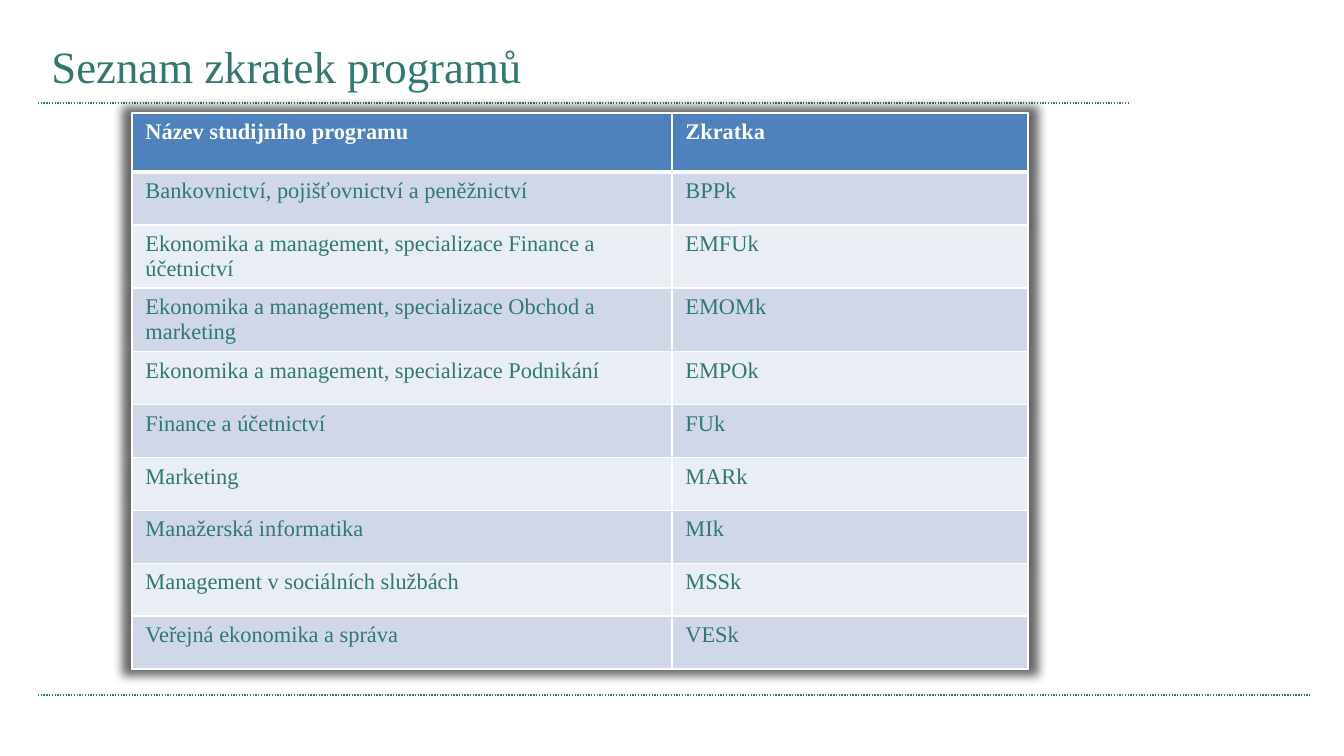
from lxml.etree import SubElement
from pptx import Presentation
from pptx.dml.color import RGBColor
from pptx.enum.dml import MSO_LINE_DASH_STYLE as Dash
from pptx.enum.shapes import MSO_CONNECTOR as Connector
from pptx.enum.text import MSO_ANCHOR as Anchor, PP_ALIGN as Align
from pptx.oxml import parse_xml
from pptx.oxml.ns import nsdecls, qn
from pptx.util import Pt

# Content
TITLE = "Seznam zkratek programů"
HEADER = ("Název studijního programu", "Zkratka")
PROGRAMS = [
    ("Bankovnictví, pojišťovnictví a peněžnictví", "BPPk"),
    ("Ekonomika a management, specializace Finance a účetnictví", "EMFUk"),
    ("Ekonomika a management, specializace Obchod a marketing", "EMOMk"),
    ("Ekonomika a management, specializace Podnikání", "EMPOk"),
    ("Finance a účetnictví", "FUk"),
    ("Marketing", "MARk"),
    ("Manažerská informatika", "MIk"),
    ("Management v sociálních službách", "MSSk"),
    ("Veřejná ekonomika a správa", "VESk"),
]

# Look and layout, in px
FONT = "Times New Roman"
COLORS = {"green": "307871", "white": "FFFFFF", "header": "4F81BD",
          "odd": "D0D8E8", "even": "E9EDF4", "shadow": "000000"}
SLIDE_SIZE = (1344, 756)
TITLE_BOX = (38, 28, 667, 75)
RULES = [(38, 1128, 103), (38, 1310, 695)]
TABLE_LEFT, TABLE_TOP = 132, 113
COLUMN_WIDTHS = (540, 356)
HEADER_HEIGHT, ROW_HEIGHT = 59, 53


def px(length):
    return round(length * 914400 / 134.4)


def write(frame, text, size=12, color="green", bold=False):
    paragraph = frame.paragraphs[0]
    paragraph.alignment = Align.LEFT
    run = paragraph.add_run()
    run.text = text
    run.font.name = FONT
    run.font.size = Pt(size)
    run.font.bold = bold
    run.font.color.rgb = RGBColor.from_string(COLORS[color])


def add_rule(shapes, left, right, y):
    rule = shapes.add_connector(Connector.STRAIGHT, px(left), px(y), px(right), px(y))
    rule.line.color.rgb = RGBColor.from_string(COLORS["green"])
    rule.line.width = Pt(0.75)
    rule.line.dash_style = Dash.ROUND_DOT
    SubElement(rule.element.spPr, qn("a:effectLst"))


def set_borders(cell, **widths):
    properties = cell._tc.get_or_add_tcPr()
    for side, width in widths.items():
        properties.append(parse_xml(
            f'<a:ln{side} {nsdecls("a")} w="{Pt(width)}"><a:solidFill>'
            f'<a:srgbClr val="{COLORS["white"]}"/></a:solidFill></a:ln{side}>'))


def add_shadow(table):
    table._tbl.tblPr.insert(0, parse_xml(
        f'<a:effectLst {nsdecls("a")}><a:outerShdw blurRad="63500" sx="102000" '
        f'sy="102000" algn="ctr" rotWithShape="0"><a:srgbClr val="{COLORS["shadow"]}">'
        '<a:alpha val="60000"/></a:srgbClr></a:outerShdw></a:effectLst>'))


deck = Presentation()
deck.slide_width, deck.slide_height = map(px, SLIDE_SIZE)
slide = deck.slides.add_slide(deck.slide_layouts[5])

# Title and dotted rules
title = slide.shapes.title
title.left, title.top, title.width, title.height = map(px, TITLE_BOX)
title.text_frame.vertical_anchor = Anchor.MIDDLE
write(title.text_frame, TITLE, size=24)
for rule_place in RULES:
    add_rule(slide.shapes, *rule_place)

# Table of programs
rows = [HEADER, *PROGRAMS]
heights = [HEADER_HEIGHT] + [ROW_HEIGHT] * len(PROGRAMS)
table = slide.shapes.add_table(
    len(rows), len(HEADER), px(TABLE_LEFT), px(TABLE_TOP),
    px(sum(COLUMN_WIDTHS)), px(sum(heights))).table
add_shadow(table)
for column, width in zip(table.columns, COLUMN_WIDTHS):
    column.width = px(width)

for r, (texts, height) in enumerate(zip(rows, heights)):
    table.rows[r].height = px(height)
    is_header = r == 0
    fill = "header" if is_header else "odd" if r % 2 else "even"
    for c, text in enumerate(texts):
        cell = table.cell(r, c)
        set_borders(cell, L=1, R=1, T=3 if r == 1 else 1, B=3 if is_header else 1)
        cell.fill.solid()
        cell.fill.fore_color.rgb = RGBColor.from_string(COLORS[fill])
        write(cell.text_frame, text, color="white" if is_header else "green",
              bold=is_header)

deck.save("out.pptx")
